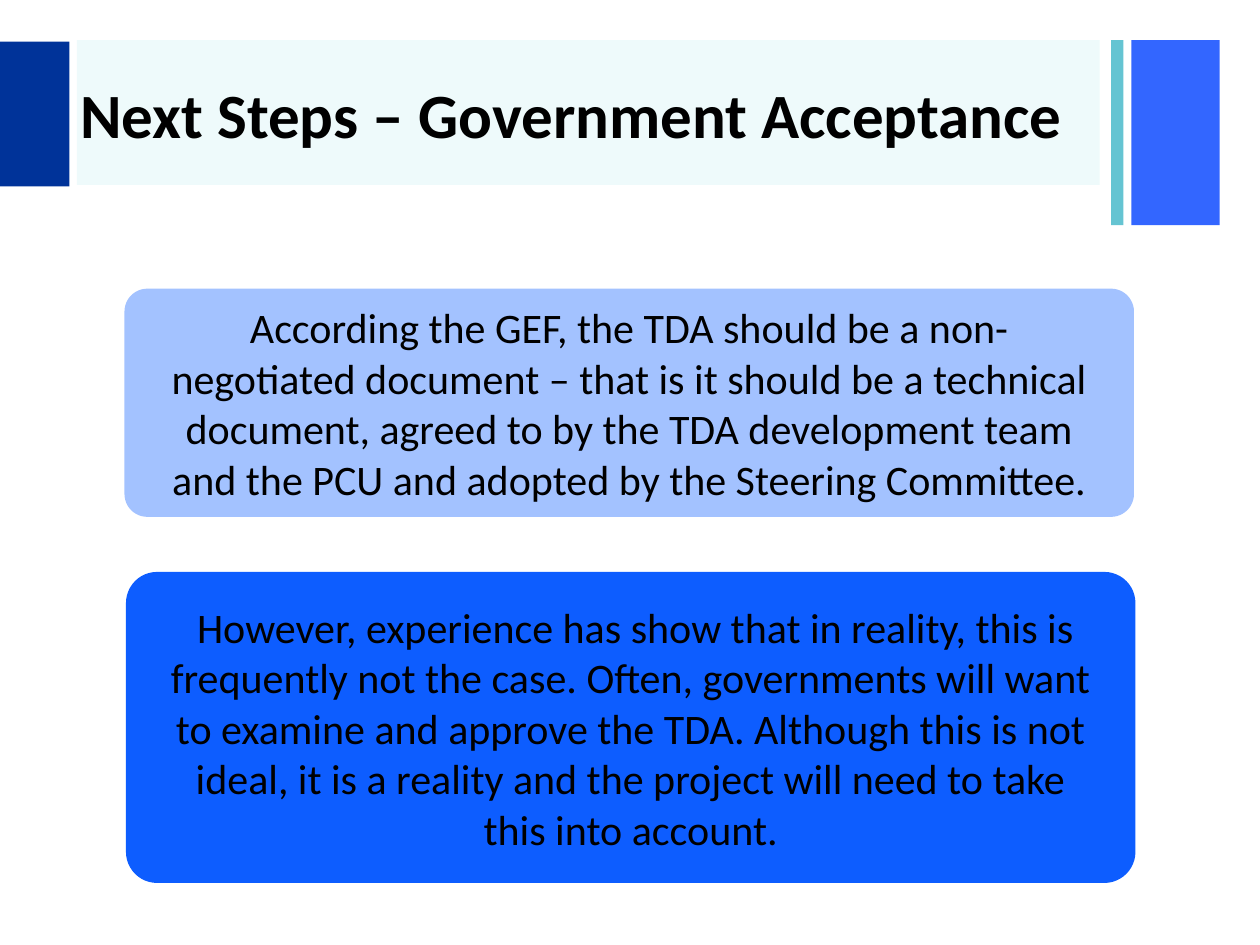
from dataclasses import dataclass

from pptx import Presentation
from pptx.dml.color import RGBColor
from pptx.enum.shapes import MSO_SHAPE as Shape
from pptx.enum.text import MSO_ANCHOR as Anchor, PP_ALIGN as Align
from pptx.oxml.ns import qn
from pptx.util import Cm, Pt
from lxml.etree import SubElement


@dataclass(frozen=True)
class Theme:
    font: str = "Calibri"
    title_size: int = 36
    body_size: int = 24
    text: str = "000000"
    navy: str = "003399"
    blue: str = "3366FF"
    teal: str = "65C4D2"
    tint: str = "14C5D0"
    pale_card: str = "A3C2FF"
    strong_card: str = "0D5DFF"


@dataclass(frozen=True)
class Box:
    """Position and size in centimetres."""
    left: float
    top: float
    width: float
    height: float

    def lengths(self) -> tuple:
        return Cm(self.left), Cm(self.top), Cm(self.width), Cm(self.height)


@dataclass(frozen=True)
class Band:
    box: Box
    color: str
    opacity: int = 100  # percent


@dataclass(frozen=True)
class Card:
    box: Box
    color: str
    text: str


THEME = Theme()
CARD_INSET = Cm(0.69)

BANDS = [
    Band(Box(22.81, 0.81, 1.78, 3.73), THEME.blue),
    Band(Box(22.4, 0.81, 0.25, 3.73), THEME.teal),
    Band(Box(1.55, 0.81, 20.62, 2.92), THEME.tint, opacity=7),
    Band(Box(0, 0.84, 1.4, 2.92), THEME.navy),
]

TITLE = "Next Steps – Government Acceptance"
TITLE_BOX = Box(1.37, 0.86, 21.01, 2.84)

CARDS = [
    Card(Box(2.51, 5.82, 20.35, 4.6), THEME.pale_card,
         "According the GEF, the TDA should be a non-negotiated document – that is "
         "it should be a technical document, agreed to by the TDA development team "
         "and the PCU and adopted by the Steering Committee."),
    Card(Box(2.54, 11.53, 20.35, 6.27), THEME.strong_card,
         " However, experience has show that in reality, this is frequently not the "
         "case. Often, governments will want to examine and approve the TDA. "
         "Although this is not ideal, it is a reality and the project will need to "
         "take this into account."),
]


def add_block(s, kind: Shape, box: Box, color: str):
    sp = s.shapes.add_shape(kind, *box.lengths())
    sp.shadow.inherit = False
    sp.fill.solid()
    sp.fill.fore_color.rgb = RGBColor.from_string(color)
    sp.line.fill.background()
    return sp


def write_text(sp, text: str, size: int, align: Align, bold: bool = False) -> None:
    tf = sp.text_frame
    tf.word_wrap = True
    tf.vertical_anchor = Anchor.MIDDLE
    p = tf.paragraphs[0]
    p.text = text
    p.alignment = align
    p.font.name = THEME.font
    p.font.size = Pt(size)
    p.font.bold = bold
    p.font.color.rgb = RGBColor.from_string(THEME.text)


def add_band(s, band: Band) -> None:
    sp = add_block(s, Shape.RECTANGLE, band.box, band.color)
    if band.opacity < 100:
        color = sp.fill._xPr.find(qn("a:solidFill"))[0]
        SubElement(color, qn("a:alpha")).set("val", str(band.opacity * 1000))


def add_card(s, card: Card) -> None:
    sp = add_block(s, Shape.ROUNDED_RECTANGLE, card.box, card.color)
    sp.adjustments[0] = 0.1
    tf = sp.text_frame
    tf.margin_left = tf.margin_right = CARD_INSET
    write_text(sp, card.text, THEME.body_size, Align.CENTER)


def main() -> None:
    prs = Presentation()
    prs.slide_width, prs.slide_height = Cm(25.4), Cm(19.05)
    s = prs.slides.add_slide(prs.slide_layouts[6])

    # Header bands
    for band in BANDS:
        add_band(s, band)

    # Title
    title = s.shapes.add_textbox(*TITLE_BOX.lengths())
    write_text(title, TITLE, THEME.title_size, Align.LEFT, bold=True)

    # Message cards
    for card in CARDS:
        add_card(s, card)

    prs.save("out.pptx")


if __name__ == "__main__":
    main()
